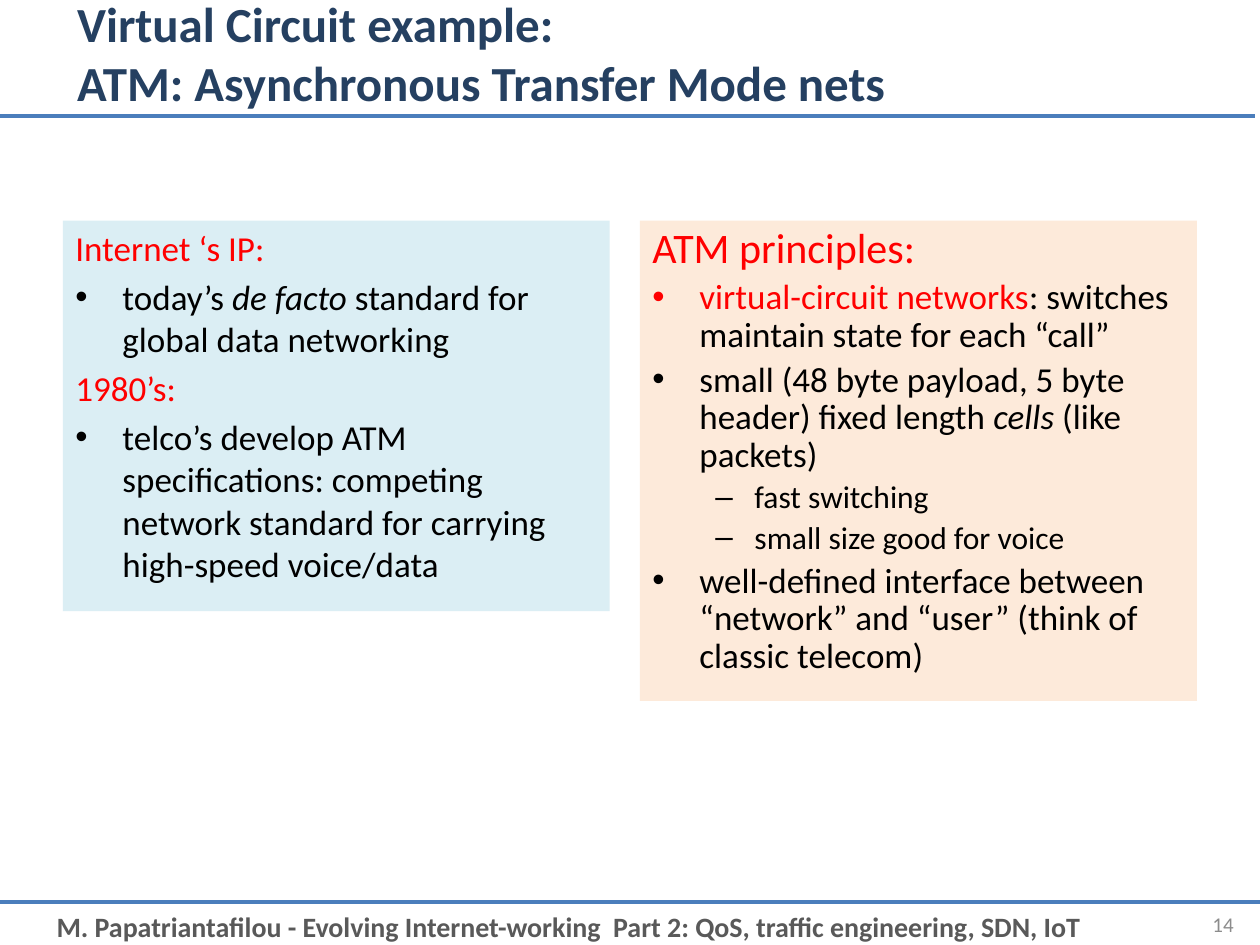
from lxml.etree import SubElement
from pptx import Presentation
from pptx.dml.color import RGBColor
from pptx.enum.shapes import MSO_CONNECTOR
from pptx.enum.text import MSO_ANCHOR, MSO_AUTO_SIZE, PP_ALIGN
from pptx.oxml.ns import qn
from pptx.util import Cm, Pt

RED, BLACK = "FF0000", "000000"


def color(hex_string):
    return RGBColor.from_string(hex_string)


def style_run(run, size, hex_string, bold=False, italic=False):
    font = run.font
    font.name, font.size, font.bold, font.italic = "Calibri", Pt(size), bold, italic
    font.color.rgb = color(hex_string)


presentation = Presentation()
presentation.slide_width, presentation.slide_height = Cm(25.4), Cm(19.05)
slide = presentation.slides.add_slide(presentation.slide_layouts[5])

# Rules under the title and above the footer
for left, top in [(0, 18.19), (-0.1, 2.34)]:
    rule = slide.shapes.add_connector(
        MSO_CONNECTOR.STRAIGHT, Cm(left), Cm(top), Cm(left + 25.4), Cm(top))
    rule.line.color.rgb = color("4B7EBC")
    rule.line.width = Pt(2.25)
    SubElement(rule._element.spPr, qn("a:effectLst"))

# Title
title = slide.shapes.title
title.left, title.top, title.width, title.height = Cm(1.3), Cm(0), Cm(22.83), Cm(2.11)
title.text_frame.text = "Virtual Circuit example:\vATM: Asynchronous Transfer Mode nets"
title.text_frame.auto_size = MSO_AUTO_SIZE.NONE
title.text_frame.vertical_anchor = MSO_ANCHOR.MIDDLE
title_paragraph = title.text_frame.paragraphs[0]
title_paragraph.alignment = PP_ALIGN.LEFT
for run in title_paragraph.runs:
    style_run(run, 28, "254061", bold=True)

# Panels: each paragraph is (bullet, size, runs), each run (text, colour, italic)
internet_paragraphs = [
    ("", 20, [("Internet ‘s IP:", RED, False)]),
    ("•", 20, [("today’s ", BLACK, False), ("de facto", BLACK, True),
               (" standard for global data networking", BLACK, False)]),
    ("", 20, [("1980’s:", RED, False)]),
    ("•", 20, [("telco’s develop ATM specifications: competing network standard "
                "for carrying high-speed voice/data", BLACK, False)]),
]
atm_paragraphs = [
    ("", 24, [("ATM principles:", RED, False)]),
    ("•", 20, [("virtual-circuit networks", RED, False),
               (": switches maintain state for each “call”", BLACK, False)]),
    ("•", 20, [("small (48 byte payload, 5 byte header) fixed length ", BLACK, False),
               ("cells", BLACK, True), (" (like packets)", BLACK, False)]),
    ("–", 18, [("fast switching", BLACK, False)]),
    ("–", 18, [("small size good for voice", BLACK, False)]),
    ("•", 20, [("well-defined interface between “network” and “user” "
                "(think of classic telecom)", BLACK, False)]),
]
panels = [
    (1.27, 11.02, 7.87, "DBEEF4", 1.0, internet_paragraphs),
    (12.9, 11.23, 9.68, "FDEADA", 0.9, atm_paragraphs),
]
for left, width, height, fill, line_spacing, paragraphs in panels:
    panel = slide.shapes.add_textbox(Cm(left), Cm(4.45), Cm(width), Cm(height))
    panel.fill.solid()
    panel.fill.fore_color.rgb = color(fill)
    text_frame = panel.text_frame
    text_frame.word_wrap = True
    for index, (bullet, size, runs) in enumerate(paragraphs):
        paragraph = text_frame.add_paragraph() if index else text_frame.paragraphs[0]
        paragraph.line_spacing = line_spacing
        paragraph.space_before = Pt(0.2 * size)
        is_dash = bullet == "–"
        paragraph.level = 1 if is_dash else 0
        margin, indent = (2.06, -0.79) if is_dash else (0.95, -0.95)
        properties = paragraph._p.get_or_add_pPr()
        properties.set("marL", str(Cm(margin)))
        properties.set("indent", str(Cm(indent)))
        if bullet:
            SubElement(properties, qn("a:buFont"), typeface="Arial")
            SubElement(properties, qn("a:buChar"), char=bullet)
        else:
            SubElement(properties, qn("a:buNone"))
        for text, hex_string, italic in runs:
            run = paragraph.add_run()
            run.text = text
            style_run(run, size, hex_string, italic=italic)

# Footer and slide number
footer_items = [
    ("M. Papatriantafilou - Evolving Internet-working  Part 2: QoS, traffic engineering, "
     "SDN, IoT", 0.89, 18.21, 23.5, 0.94, 16, "595959", True, PP_ALIGN.LEFT, MSO_ANCHOR.TOP),
    ("14", 23.09, 18.11, 2.03, 1.02, 12, "8C8C8C", False, PP_ALIGN.RIGHT, MSO_ANCHOR.MIDDLE),
]
for text, left, top, width, height, size, hex_string, bold, alignment, anchor in footer_items:
    box = slide.shapes.add_textbox(Cm(left), Cm(top), Cm(width), Cm(height))
    box.text_frame.word_wrap = True
    box.text_frame.vertical_anchor = anchor
    box.text_frame.text = text
    paragraph = box.text_frame.paragraphs[0]
    paragraph.alignment = alignment
    style_run(paragraph.runs[0], size, hex_string, bold=bold)

presentation.save("out.pptx")
